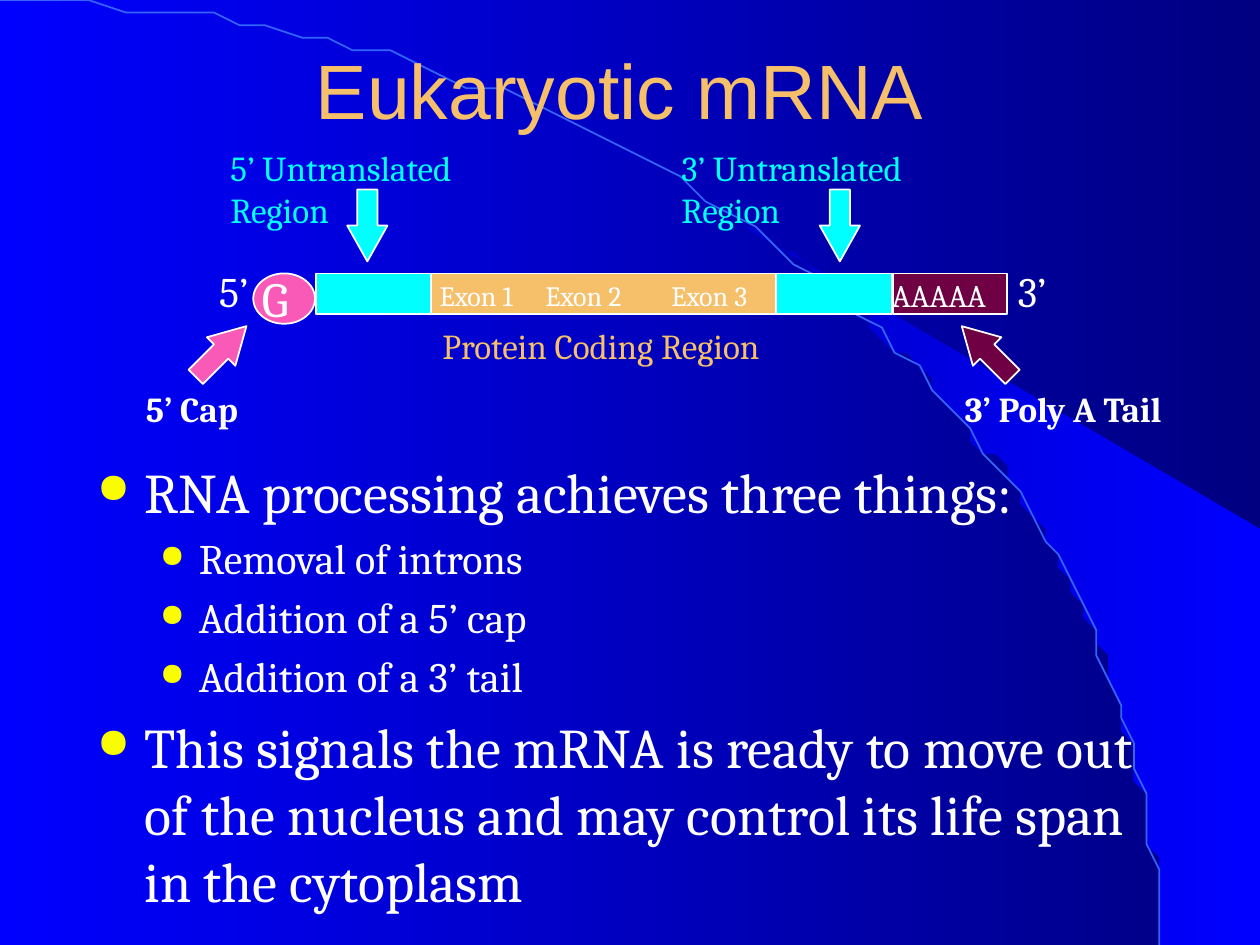
import math

import pptx
import pptx.dml.color
import pptx.enum.shapes
import pptx.enum.text
import pptx.oxml
import pptx.oxml.ns
import pptx.util

RGBColor = pptx.dml.color.RGBColor
SHAPE = pptx.enum.shapes.MSO_SHAPE
ALIGN = pptx.enum.text.PP_ALIGN

BLUE = RGBColor(0x00, 0x00, 0xFF)
MID_BLUE = RGBColor(0x00, 0x00, 0xCC)
NAVY = RGBColor(0x00, 0x00, 0x80)
ARC_BLUE = RGBColor(0x33, 0x65, 0xFB)
ORANGE = RGBColor(0xF6, 0xBF, 0x69)
CYAN = RGBColor(0x00, 0xFF, 0xFF)
PINK = RGBColor(0xF9, 0x5A, 0xB7)
MAROON = RGBColor(0x6E, 0x00, 0x43)
WHITE = RGBColor(0xFF, 0xFF, 0xFF)
BULLET_YELLOW = "FAFD00"


class SlideBuilder:
    """Places elements on a grid of 100 columns by 75 rows."""

    CELL = pptx.util.Inches(0.1)
    HEADING_FONT = "Arial"
    BODY_FONT = "Cambria"

    def __init__(self, presentation):
        presentation.slide_width = 100 * self.CELL
        presentation.slide_height = 75 * self.CELL
        self.slide = presentation.slides.add_slide(presentation.slide_layouts[5])
        self.shapes = self.slide.shapes

    def cells(self, *lengths):
        return [round(length * self.CELL) for length in lengths]

    def gradient(self, fill, start, end):
        fill.gradient()
        fill.gradient_angle = 0
        for stop, color in zip(fill.gradient_stops, (start, end)):
            stop.color.rgb = color

    def format_runs(self, paragraph, size, color, font=BODY_FONT, bold=False):
        for run in paragraph.runs:
            run.font.name = font
            run.font.size = pptx.util.Pt(size)
            run.font.color.rgb = color
            run.font.bold = bold

    def outline(self, points, closed):
        builder = self.shapes.build_freeform(*points[0], scale=self.CELL)
        builder.add_line_segments(points[1:], close=closed)
        shape = builder.convert_to_shape()
        shape.shadow.inherit = False
        return shape

    def title(self, text, left, top, width, height):
        title = self.shapes.title
        title.left, title.top, title.width, title.height = self.cells(left, top, width, height)
        title.text_frame.text = text
        title.text_frame.vertical_anchor = pptx.enum.text.MSO_ANCHOR.MIDDLE
        paragraph = title.text_frame.paragraphs[0]
        paragraph.alignment = ALIGN.CENTER
        self.format_runs(paragraph, 44, ORANGE, self.HEADING_FONT)
        # Bring the title in front of the backdrop
        title._element.getparent().append(title._element)

    def block(self, kind, left, top, width, height, color):
        shape = self.shapes.add_shape(kind, *self.cells(left, top, width, height))
        shape.shadow.inherit = False
        shape.fill.solid()
        shape.fill.fore_color.rgb = color
        shape.line.color.rgb = WHITE
        shape.line.width = pptx.util.Pt(1)
        return shape

    def arrow(self, left, top, rotation, color):
        shape = self.block(SHAPE.RIGHT_ARROW, left, top, 5.7, 3.2, color)
        shape.adjustments[0] = 0.5
        shape.adjustments[1] = 0.89
        shape.rotation = rotation

    def text_box(self, left, top, width, height):
        box = self.shapes.add_textbox(*self.cells(left, top, width, height))
        box.text_frame.word_wrap = True
        return box.text_frame

    def label(self, text, left, top, width, height, size, color=WHITE,
              bold=False, align=ALIGN.LEFT):
        frame = self.text_box(left, top, width, height)
        frame.text = text
        frame.paragraphs[0].alignment = align
        self.format_runs(frame.paragraphs[0], size, color, bold=bold)

    def bullets(self, items, left, top, width, height):
        level_styles = ((32, 0.38, -0.38), (24, 0.81, -0.31))
        frame = self.text_box(left, top, width, height)
        for index, (level, text) in enumerate(items):
            paragraph = frame.paragraphs[0] if index == 0 else frame.add_paragraph()
            size, margin, indent = level_styles[level]
            paragraph.text = text
            paragraph.level = level
            self.format_runs(paragraph, size, WHITE)
            properties = paragraph._p.get_or_add_pPr()
            properties.set("marL", str(pptx.util.Inches(margin)))
            properties.set("indent", str(pptx.util.Inches(indent)))
            namespace = pptx.oxml.ns.nsdecls("a")
            for xml in (
                f'<a:spcBef {namespace}><a:spcPct val="20000"/></a:spcBef>',
                f'<a:buClr {namespace}><a:srgbClr val="{BULLET_YELLOW}"/></a:buClr>',
                f'<a:buSzPct {namespace} val="75000"/>',
                f'<a:buChar {namespace} char="●"/>',
            ):
                properties.append(pptx.oxml.parse_xml(xml))


def ellipse_points(start_degrees, steps=60):
    """Points from an angle off the vertical down to the bottom edge."""
    angles = (math.radians(start_degrees + (90 - start_degrees) * step / steps)
              for step in range(steps + 1))
    return [(91.9 * math.sin(angle), 74.9 - 74.8 * math.cos(angle)) for angle in angles]


def main():
    presentation = pptx.Presentation()
    builder = SlideBuilder(presentation)

    # Backdrop: gradient, bright wedge and large arc
    builder.gradient(builder.slide.background.fill, BLUE, NAVY)
    wedge = builder.outline(ellipse_points(39.9) + [(99.9, 74.9), (99.9, 42.3)], True)
    builder.gradient(wedge.fill, MID_BLUE, BLUE)
    wedge.line.fill.background()
    arc = builder.outline(ellipse_points(0), False)
    arc.fill.background()
    arc.line.color.rgb = ARC_BLUE
    arc.line.width = pptx.util.Pt(1)

    builder.title("Eukaryotic mRNA", 6.7, 0.8, 85, 12.5)

    # The mRNA strand
    strand_top, strand_height = 21.7, 3.2
    for left, width, color in ((25.1, 45.7, CYAN), (34.2, 27.4, ORANGE), (70.9, 9, MAROON)):
        builder.block(SHAPE.RECTANGLE, left, strand_top, width, strand_height, color)
    builder.block(SHAPE.OVAL, 20.1, strand_top, 4.9, 4, PINK)

    # Strand labels
    for number, left in enumerate((33.9, 42.3, 52.3), start=1):
        builder.label(f"Exon {number}", left, 21.6, 8.3, 3.6, 16)
    builder.label("AAAAA", 69.8, 21.4, 11, 4, 18)
    builder.label("G", 19.8, 20.8, 4.9, 5.6, 28)
    builder.label("Protein Coding Region", 33.9, 25.3, 27.6, 4.3, 20, ORANGE,
                  align=ALIGN.CENTER)

    # Strand ends and untranslated regions
    for end, end_left, region_left, arrow_left in (
        ("5’", 16.4, 17.3, 26.3),
        ("3’", 79.8, 53.1, 63.8),
    ):
        builder.label(end, end_left, 20.6, 4.8, 5, 24)
        builder.label(f"{end} Untranslated Region", region_left, 11.1, 27.9, 4.3, 20, CYAN)
        builder.arrow(arrow_left, 16.3, 90, CYAN)

    # Cap and tail
    builder.arrow(14.7, 26.3, 315, PINK)
    builder.arrow(75.5, 26.3, 225, MAROON)
    builder.label("5’ Cap", 10.6, 30.3, 9.9, 4.3, 20, bold=True)
    builder.label("3’ Poly A Tail", 75.6, 30.3, 18.4, 4.3, 20, bold=True)

    # Explanation
    builder.bullets([
        (0, "RNA processing achieves three things:"),
        (1, "Removal of introns"),
        (1, "Addition of a 5’ cap"),
        (1, "Addition of a 3’ tail"),
        (0, "This signals the mRNA is ready to move out of the nucleus "
            "and may control its life span in the cytoplasm"),
    ], 6.7, 35.8, 85, 25)

    presentation.save("out.pptx")


if __name__ == "__main__":
    main()
